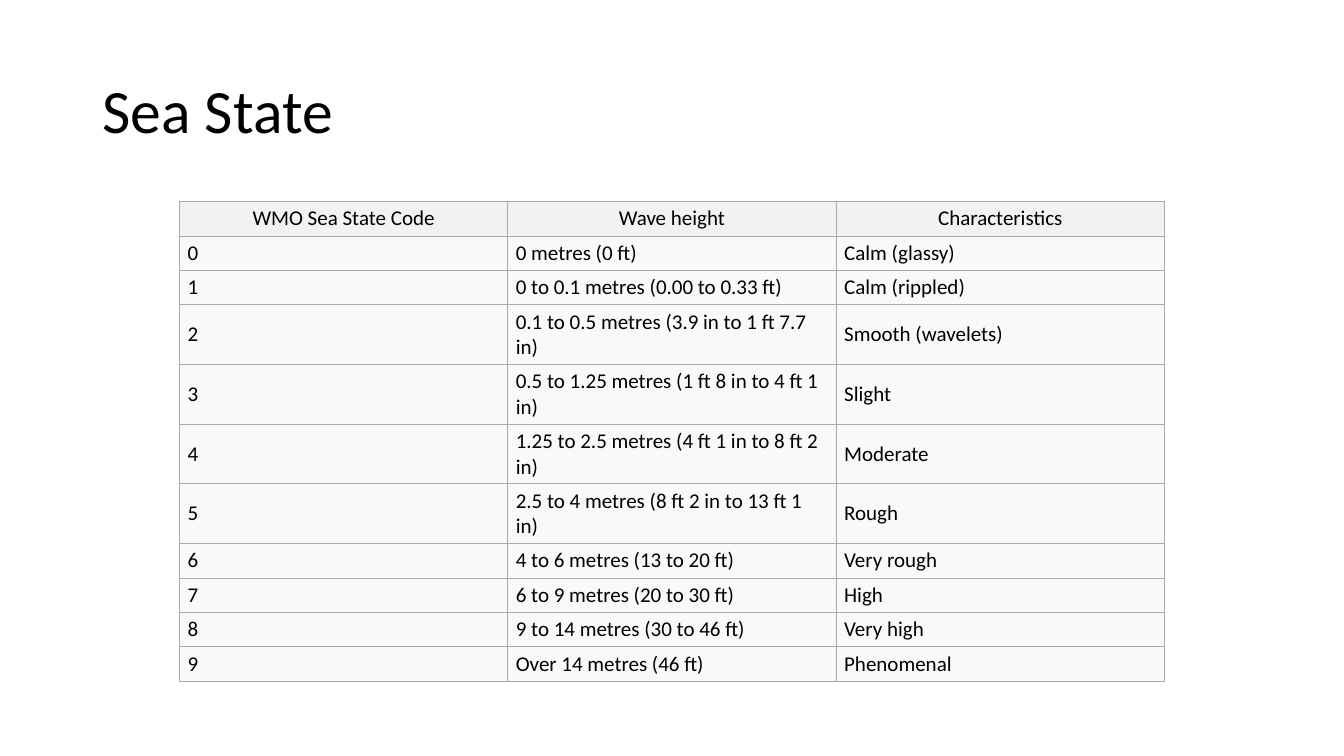
from lxml.etree import SubElement
from pptx import Presentation
from pptx.dml.color import RGBColor
from pptx.enum.text import MSO_ANCHOR as Anchor, PP_ALIGN as Align
from pptx.oxml.ns import qn
from pptx.util import Inches, Pt

BLACK = RGBColor(0x00, 0x00, 0x00)
HEADER_GREY = RGBColor(0xF2, 0xF2, 0xF2)
BODY_GREY = RGBColor(0xF9, 0xF9, 0xF9)
BORDER_GREY = RGBColor(0xAA, 0xAA, 0xAA)
FONT = "Calibri"
TEXT_LINE = 0.25  # extra height of a row whose wave height takes two lines

HEADINGS = ("WMO Sea State Code", "Wave height", "Characteristics")
# Wave height, characteristics, lines of text; the code is the position.
# Numbers and their units are joined by no-break spaces.
SEA_STATES = [
    ("0 metres (0 ft)", "Calm (glassy)", 1),
    ("0 to 0.1 metres (0.00 to 0.33 ft)", "Calm (rippled)", 1),
    ("0.1 to 0.5 metres (3.9 in to 1 ft 7.7 in)", "Smooth (wavelets)", 2),
    ("0.5 to 1.25 metres (1 ft 8 in to 4 ft 1 in)", "Slight", 2),
    ("1.25 to 2.5 metres (4 ft 1 in to 8 ft 2 in)", "Moderate", 2),
    ("2.5 to 4 metres (8 ft 2 in to 13 ft 1 in)", "Rough", 2),
    ("4 to 6 metres (13 to 20 ft)", "Very rough", 1),
    ("6 to 9 metres (20 to 30 ft)", "High", 1),
    ("9 to 14 metres (30 to 46 ft)", "Very high", 1),
    ("Over 14 metres (46 ft)", "Phenomenal", 1),
]


def write(frame, text, size, align=Align.LEFT, spacing=1.0):
    paragraph = frame.paragraphs[0]
    paragraph.alignment = align
    paragraph.line_spacing = spacing
    run = paragraph.add_run()
    run.text = text
    run.font.size = Pt(size)
    run.font.name = FONT
    run.font.color.rgb = BLACK


def add_borders(cell):
    properties = cell._tc.get_or_add_tcPr()
    for position, side in enumerate(("a:lnL", "a:lnR", "a:lnT", "a:lnB")):
        line = properties.makeelement(qn(side), {"w": str(Pt(0.75))})
        fill = SubElement(line, qn("a:solidFill"))
        SubElement(fill, qn("a:srgbClr"), val=str(BORDER_GREY))
        properties.insert(position, line)  # borders precede the cell fill


def style_cell(cell, text, fill, align):
    cell.fill.solid()
    cell.fill.fore_color.rgb = fill
    cell.vertical_anchor = Anchor.MIDDLE
    cell.margin_left = cell.margin_right = Inches(0.08)
    cell.margin_top = cell.margin_bottom = Inches(0.04)
    write(cell.text_frame, text, size=15, align=align)
    add_borders(cell)


def add_title(slide, box, text):
    frame = slide.shapes.add_textbox(*map(Inches, box)).text_frame
    frame.word_wrap = True
    frame.vertical_anchor = Anchor.MIDDLE
    write(frame, text, size=44, spacing=0.9)


def add_sea_state_table(slide, box):
    rows = [(HEADINGS, 1)]
    for code, (waves, character, lines) in enumerate(SEA_STATES):
        rows.append(((str(code), waves, character), lines))
    width, height = box[2:]
    extra_lines = sum(lines - 1 for _, lines in rows)
    single_row = (height - extra_lines * TEXT_LINE) / len(rows)

    table = slide.shapes.add_table(
        len(rows), len(HEADINGS), *map(Inches, box)).table
    table.horz_banding = False
    table.first_row = False
    for column in table.columns:
        column.width = Inches(width / len(HEADINGS))
    for r, (texts, lines) in enumerate(rows):
        table.rows[r].height = Inches(single_row + (lines - 1) * TEXT_LINE)
        fill, align = ((BODY_GREY, Align.LEFT) if r
                       else (HEADER_GREY, Align.CENTER))
        for c, text in enumerate(texts):
            style_cell(table.cell(r, c), text, fill, align)


def main():
    deck = Presentation()
    deck.slide_width, deck.slide_height = Inches(13.33), Inches(7.5)
    slide = deck.slides.add_slide(deck.slide_layouts[6])
    # Title
    add_title(slide, (0.92, 0.4, 11.5, 1.45), "Sea State")
    # Table of codes
    add_sea_state_table(slide, (1.78, 2, 9.77, 4.76))
    deck.save("out.pptx")


if __name__ == "__main__":
    main()
